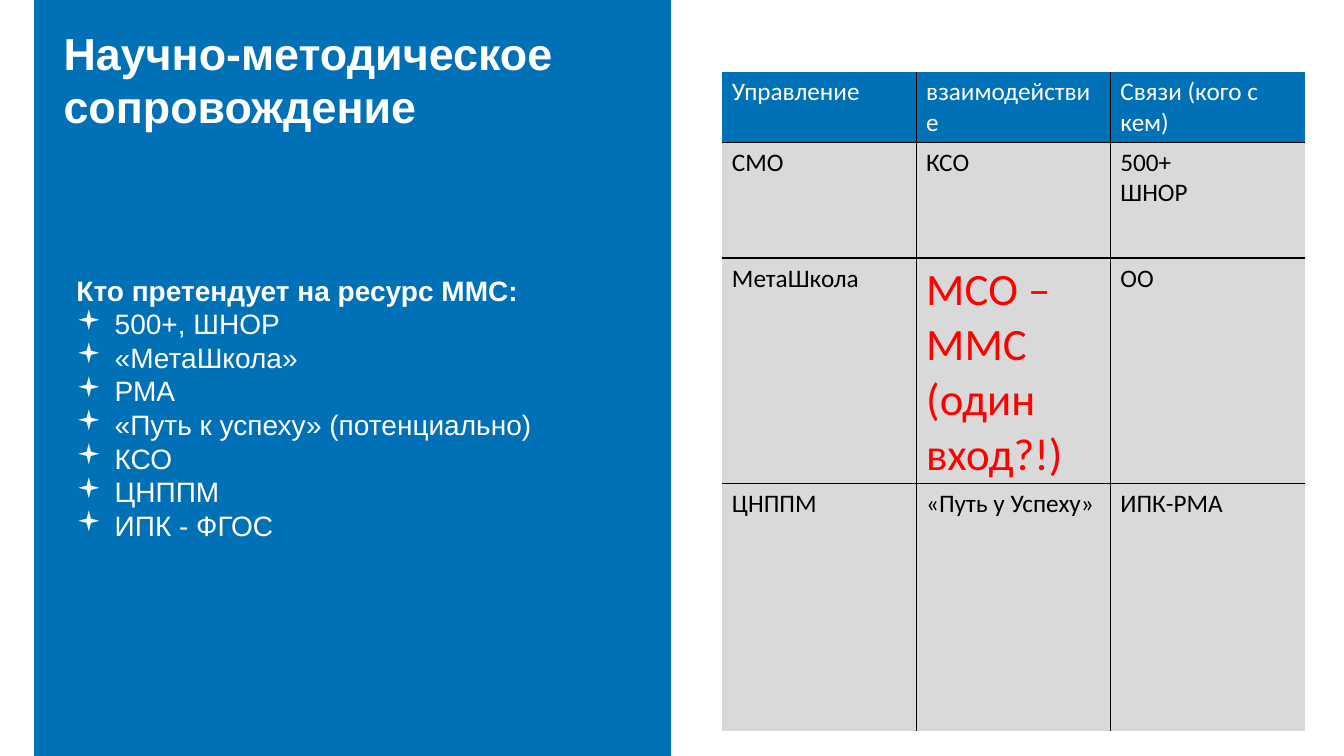
from lxml.etree import SubElement as Sub
from pptx import Presentation
from pptx.dml.color import RGBColor as Rgb
from pptx.enum.shapes import MSO_SHAPE as Form
from pptx.enum.text import MSO_ANCHOR as Anchor, PP_ALIGN as Align
from pptx.oxml.ns import qn
from pptx.util import Inches as In, Pt

BLUE = Rgb(0x00, 0x70, 0xB7)
GREY = Rgb(0xD9, 0xD9, 0xD9)
WHITE = Rgb(0xFF, 0xFF, 0xFF)
BLACK = Rgb(0, 0, 0)
RED = Rgb(0xFF, 0, 0)

TITLE = "Научно-методическое сопровождение"
HEAD = "Кто претендует на ресурс ММС:"
ITEMS = ["500+, ШНОР", "«МетаШкола»", "РМА", "«Путь к успеху» (потенциально)",
         "КСО", "ЦНППМ", "ИПК - ФГОС"]
ROWS = [
    (0.7, ["Управление", "взаимодействие", "Связи (кого с кем)"]),
    (1.15, ["СМО", "КСО", "500+\nШНОР"]),
    (2.24, ["МетаШкола", "МСО – ММС\n(один вход?!)", "ОО"]),
    (2.45, ["ЦНППМ", "«Путь у Успеху»", "ИПК-РМА"]),
]
KEY = (2, 1)
COLS = 3


def write(para, text, size, color, font, bold=False):
    para.alignment = Align.LEFT
    run = para.add_run()
    run.text = text
    run.font.size = Pt(size)
    run.font.name = font
    run.font.bold = bold
    run.font.color.rgb = color


def bullet(para):
    props = para._p.get_or_add_pPr()
    props.set("marL", str(In(0.38)))
    props.set("indent", str(-In(0.38)))
    Sub(props, qn("a:buFont"), typeface="Wingdings")
    Sub(props, qn("a:buChar"), char="▪")


def border(cell, sides):
    props = cell._tc.get_or_add_tcPr()
    for spot, (side, shown) in enumerate(sides.items()):
        line = props.makeelement(qn("a:" + side), {"w": str(Pt(1))})
        props.insert(spot, line)
        if shown:
            Sub(Sub(line, qn("a:solidFill")), qn("a:srgbClr"), val=str(BLACK))
        else:
            Sub(line, qn("a:noFill"))


deck = Presentation()
deck.slide_width, deck.slide_height = In(13.33), In(7.5)
slide = deck.slides.add_slide(deck.slide_layouts[5])
shapes = slide.shapes

panel = shapes.add_shape(Form.RECTANGLE, In(0.34), 0, In(6.31), deck.slide_height)
panel.shadow.inherit = False
panel.fill.solid()
panel.fill.fore_color.rgb = BLUE
panel.line.color.rgb = BLUE
panel.line.width = Pt(1)

title = shapes.title
panel.element.addnext(title.element)
title.left, title.top, title.width, title.height = In(0.53), In(0.2), In(6.31), In(1.18)
title.text_frame.word_wrap = True
title.text_frame.vertical_anchor = Anchor.TOP
write(title.text_frame.paragraphs[0], TITLE, 32, WHITE, "Arial", True)

notes = shapes.add_textbox(In(0.66), In(2.66), In(5.93), In(3.13)).text_frame
notes.word_wrap = True
write(notes.paragraphs[0], HEAD, 20, WHITE, "Arial", True)
for item in ITEMS:
    para = notes.add_paragraph()
    write(para, item, 20, WHITE, "Arial")
    bullet(para)

tall = sum(high for high, _ in ROWS)
table = shapes.add_table(len(ROWS), COLS, In(7.16), In(0.71), In(5.78), In(tall)).table
table.first_row = table.horz_banding = False
for row, (high, texts) in enumerate(ROWS):
    table.rows[row].height = In(high)
    for col, text in enumerate(texts):
        cell = table.cell(row, col)
        cell.fill.solid()
        cell.fill.fore_color.rgb = GREY if row else BLUE
        border(cell, {"lnL": col > 0, "lnR": col < COLS - 1,
                      "lnT": row > 0, "lnB": row < len(ROWS) - 1})
        size, color = 18, BLACK if row else WHITE
        if (row, col) == KEY:
            size, color = 32, RED
        frame = cell.text_frame
        for spot, part in enumerate(text.split("\n")):
            para = frame.add_paragraph() if spot else frame.paragraphs[0]
            write(para, part, size, color, "Calibri")

deck.save("out.pptx")
